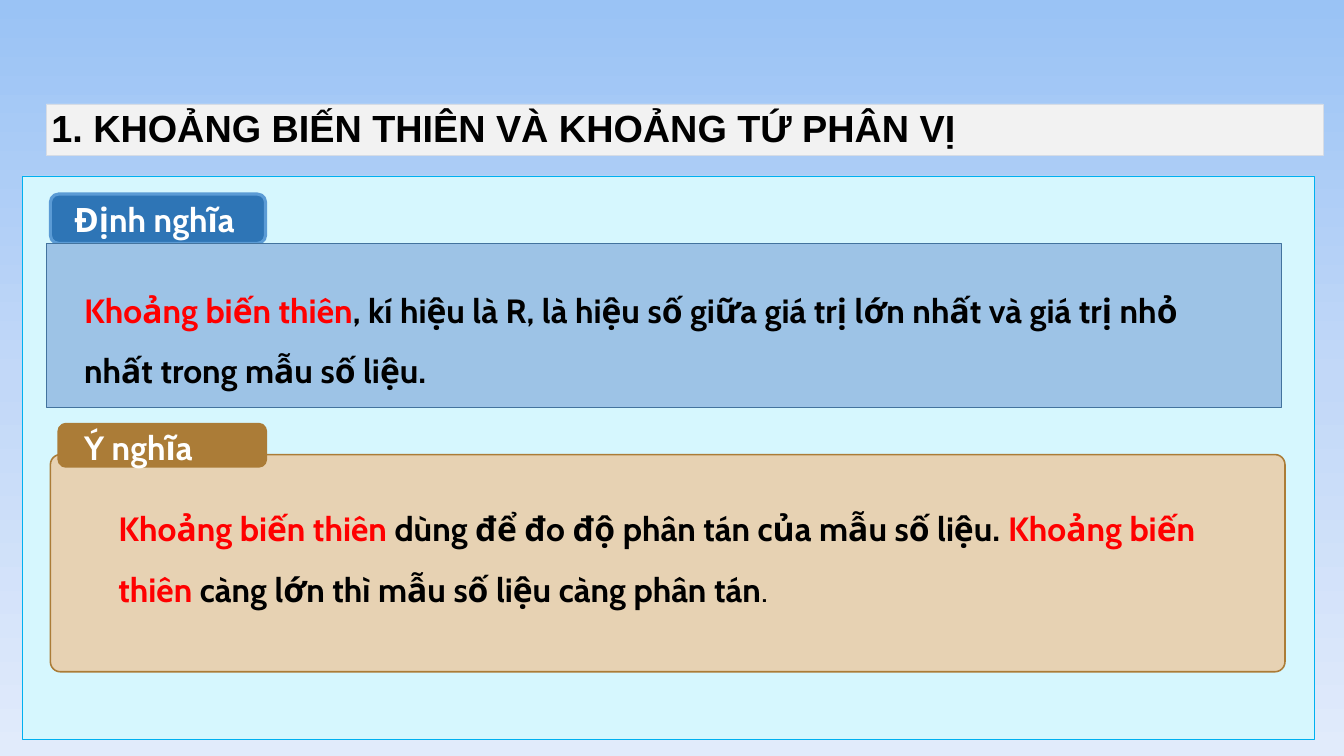
"""Build the slide on the range of a data sample: its definition and its meaning."""
from copy import deepcopy

from pptx import Presentation
from pptx.dml.color import RGBColor as Rgb
from pptx.enum.shapes import MSO_SHAPE as Shape
from pptx.enum.text import MSO_ANCHOR as Anchor, PP_ALIGN as Align
from pptx.util import Inches, Pt

COLORS = {
    "sky_top": "9AC3F5", "sky_middle": "C2D8F8", "sky_bottom": "E1EBFB",
    "title": "F2F2F2", "title_edge": "D6DCE5",
    "panel": "D6F7FE", "panel_edge": "00B0F0",
    "blue": "2E75B6", "blue_edge": "5B9BD5",
    "pale_blue": "9DC3E6", "pale_blue_edge": "43739E",
    "brown": "AB7C37", "sand": "E7D2B3",
    "black": "000000", "white": "FFFFFF", "red": "FF0000",
}

deck = Presentation()
deck.slide_width, deck.slide_height = Inches(26.67), Inches(15)
column, row = deck.slide_width / 100, deck.slide_height / 100
slide = deck.slides.add_slide(deck.slide_layouts[6])


def add_box(kind, area, fill, edge, weight):
    left, top, width, height = area
    box = slide.shapes.add_shape(kind, int(left * column), int(top * row),
                                 int(width * column), int(height * row))
    box.shadow.inherit = False
    box.fill.solid()
    box.fill.fore_color.rgb = Rgb.from_string(COLORS[fill])
    box.line.color.rgb = Rgb.from_string(COLORS[edge])
    box.line.width = Pt(weight)
    return box


def write(frame, runs, size, font, spacing):
    frame.word_wrap = True
    paragraph = frame.paragraphs[0]
    paragraph.alignment = Align.LEFT
    paragraph.line_spacing = spacing
    for wording, color, bold in runs:
        run = paragraph.add_run()
        run.text = wording
        run.font.size, run.font.name, run.font.bold = Pt(size), font, bold
        run.font.color.rgb = Rgb.from_string(COLORS[color])


sky = slide.background.fill
sky.gradient()
sky.gradient_angle = 270
first_stop = sky.gradient_stops[0]
stop_list = first_stop._gs.getparent()
stop_list.insert(1, deepcopy(first_stop._gs))
for stop, position, color in zip(sky.gradient_stops, (0, 0.5, 1),
                                 ("sky_top", "sky_middle", "sky_bottom")):
    stop.position = position
    stop.color.rgb = Rgb.from_string(COLORS[color])

title = add_box(Shape.RECTANGLE, (3.45, 13.73, 94.98, 6.87), "title", "title_edge", 0.75)
title.text_frame.vertical_anchor = Anchor.MIDDLE
write(title.text_frame, [("1. KHOẢNG BIẾN THIÊN VÀ KHOẢNG TỨ PHÂN VỊ", "black", True)],
      54, "Arial", 0.9)

add_box(Shape.RECTANGLE, (1.69, 23.27, 96.1, 74.53), "panel", "panel_edge", 0.75)
add_box(Shape.ROUNDED_RECTANGLE, (3.75, 25.67, 16.01, 6.53), "blue", "blue_edge", 4.5)
meaning = add_box(Shape.ROUNDED_RECTANGLE, (3.75, 60.13, 91.86, 28.73), "sand", "brown", 2.25)
meaning.adjustments[0] = 0.046
add_box(Shape.ROUNDED_RECTANGLE, (4.39, 56.13, 15.37, 5.53), "brown", "brown", 4.5)
add_box(Shape.RECTANGLE, (3.45, 32.2, 91.86, 21.67), "pale_blue", "pale_blue_edge", 1)

passages = [
    ((5.14, 26, 15.9, 6.07), 1, [("Định nghĩa", "white", True)]),
    ((5.89, 35.33, 85.04, 15.73), 1.5, [
        ("Khoảng biến thiên", "red", True),
        (", kí hiệu là R, là hiệu số giữa giá trị lớn nhất và giá trị nhỏ nhất "
         "trong mẫu số liệu.", "black", True),
    ]),
    ((5.89, 56.13, 15.37, 6.07), 1, [("Ý nghĩa", "white", True)]),
    ((8.44, 64.2, 82.49, 21.67), 1.5, [
        ("Khoảng biến thiên ", "red", True),
        ("dùng để đo độ phân tán của mẫu số liệu. ", "black", True),
        ("Khoảng biến thiên ", "red", True),
        ("càng lớn thì mẫu số liệu càng phân tán", "black", True),
        (".", "black", False),
    ]),
]
for (left, top, width, height), spacing, runs in passages:
    passage = slide.shapes.add_textbox(int(left * column), int(top * row),
                                       int(width * column), int(height * row))
    write(passage.text_frame, runs, 48, "Cabin", spacing)

deck.save("out.pptx")
